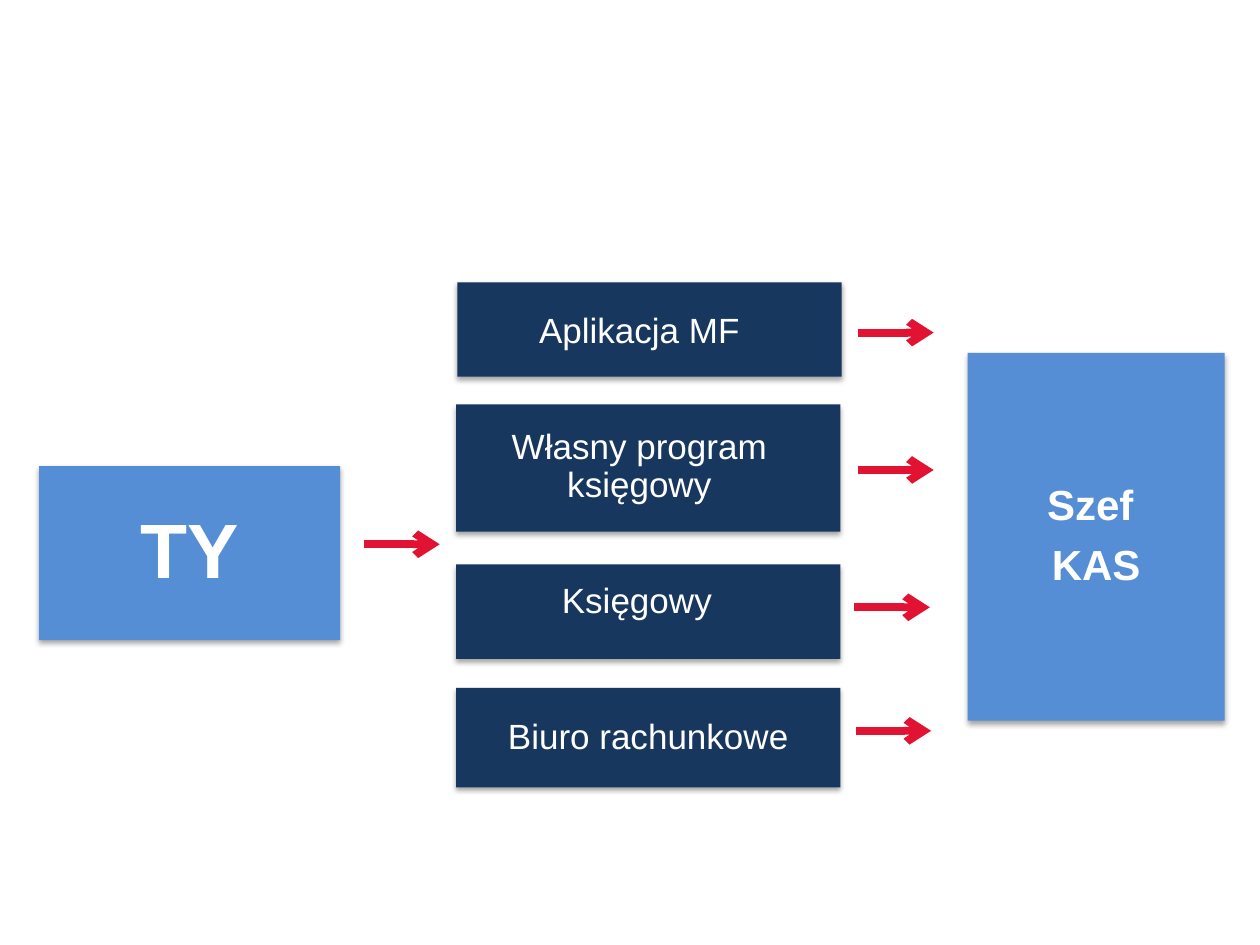
from dataclasses import dataclass

from lxml import etree
from pptx import Presentation
from pptx import util as u
from pptx.dml.color import RGBColor
from pptx.enum import shapes, text
from pptx.oxml import ns

PX = 9144  # EMU per px, 100 px to the inch


@dataclass(frozen=True)
class Theme:
    font: str = "Arial"
    navy: str = "17375E"
    blue: str = "558ED5"
    red: str = "E21232"
    white: str = "FFFFFF"
    shade: str = "000000"
    small: int = 20
    mid: int = 24
    big: int = 44
    line: float = 4.5


@dataclass(frozen=True)
class Rect:
    x: int
    y: int
    w: int
    h: int

    def emu(self) -> list[int]:
        return [n * PX for n in (self.x, self.y, self.w, self.h)]


@dataclass(frozen=True)
class Card:
    lines: tuple[str, ...]
    box: Rect
    fill: str
    size: int
    after: float
    bold: bool = False
    label: Rect | None = None  # bottom-anchored label area, if not the box


@dataclass(frozen=True)
class Arrow:
    x: int
    y: int
    w: int = 60


T = Theme()


def option(name: str, box: Rect, label: Rect | None = None) -> Card:
    return Card((name,), box, T.navy, T.small, 7, label=label)


# Taxpayer, filing options, tax office
CARDS = (
    Card(("TY",), Rect(31, 370, 239, 138), T.blue, T.big, 15.4, True),
    option("Aplikacja MF", Rect(363, 224, 305, 75), Rect(361, 216, 293, 64)),
    option("Własny program księgowy", Rect(362, 321, 305, 101),
           Rect(361, 338, 293, 64)),
    option("Księgowy", Rect(362, 448, 305, 75), Rect(359, 430, 293, 64)),
    option("Biuro rachunkowe", Rect(362, 546, 305, 79)),
    Card(("Szef ", "KAS"), Rect(768, 280, 204, 292), T.blue, T.mid, 8.4, True),
)
ARROWS = (Arrow(289, 432), Arrow(681, 264), Arrow(681, 373),
          Arrow(678, 482), Arrow(679, 580))


def add_shade(shape) -> None:
    shape.shadow.inherit = False
    fx = shape.element.spPr.find(ns.qn("a:effectLst"))
    drop = etree.SubElement(fx, ns.qn("a:outerShdw"), blurRad=str(u.Pt(3.1)),
                            dist=str(u.Pt(1.8)), dir="5400000", rotWithShape="0")
    tint = etree.SubElement(drop, ns.qn("a:srgbClr"), val=T.shade)
    etree.SubElement(tint, ns.qn("a:alpha"), val="35000")


def add_card(slide, card: Card) -> None:
    box = slide.shapes.add_shape(shapes.MSO_SHAPE.RECTANGLE, *card.box.emu())
    box.fill.solid()
    box.fill.fore_color.rgb = RGBColor.from_string(card.fill)
    box.line.fill.background()
    add_shade(box)

    area = card.label or card.box
    frame = slide.shapes.add_textbox(*area.emu()).text_frame
    frame.word_wrap = True
    frame.vertical_anchor = (text.MSO_ANCHOR.BOTTOM if card.label
                             else text.MSO_ANCHOR.MIDDLE)
    frame.margin_left = frame.margin_right = PX
    frame.margin_top = frame.margin_bottom = PX
    for i, line in enumerate(card.lines):
        para = frame.add_paragraph() if i else frame.paragraphs[0]
        para.alignment = text.PP_ALIGN.CENTER
        para.line_spacing = 0.9
        para.space_after = u.Pt(card.after)
        run = para.add_run()
        run.text = line
        font = run.font
        font.name, font.size, font.bold = T.font, u.Pt(card.size), card.bold
        font.color.rgb = RGBColor.from_string(T.white)


def add_arrow(slide, arrow: Arrow) -> None:
    x, y, end = arrow.x * PX, arrow.y * PX, (arrow.x + arrow.w) * PX
    link = slide.shapes.add_connector(shapes.MSO_CONNECTOR.STRAIGHT, x, y, end, y)
    link.line.color.rgb = RGBColor.from_string(T.red)
    link.line.width = u.Pt(T.line)
    props = link.element.spPr
    etree.SubElement(props.find(ns.qn("a:ln")), ns.qn("a:tailEnd"), type="arrow")
    etree.SubElement(props, ns.qn("a:effectLst"))


def main() -> None:
    deck = Presentation()
    deck.slide_width, deck.slide_height = 1000 * PX, 750 * PX
    slide = deck.slides.add_slide(deck.slide_layouts[6])
    for card in CARDS:
        add_card(slide, card)
    for arrow in ARROWS:
        add_arrow(slide, arrow)
    deck.save("out.pptx")


if __name__ == "__main__":
    main()
